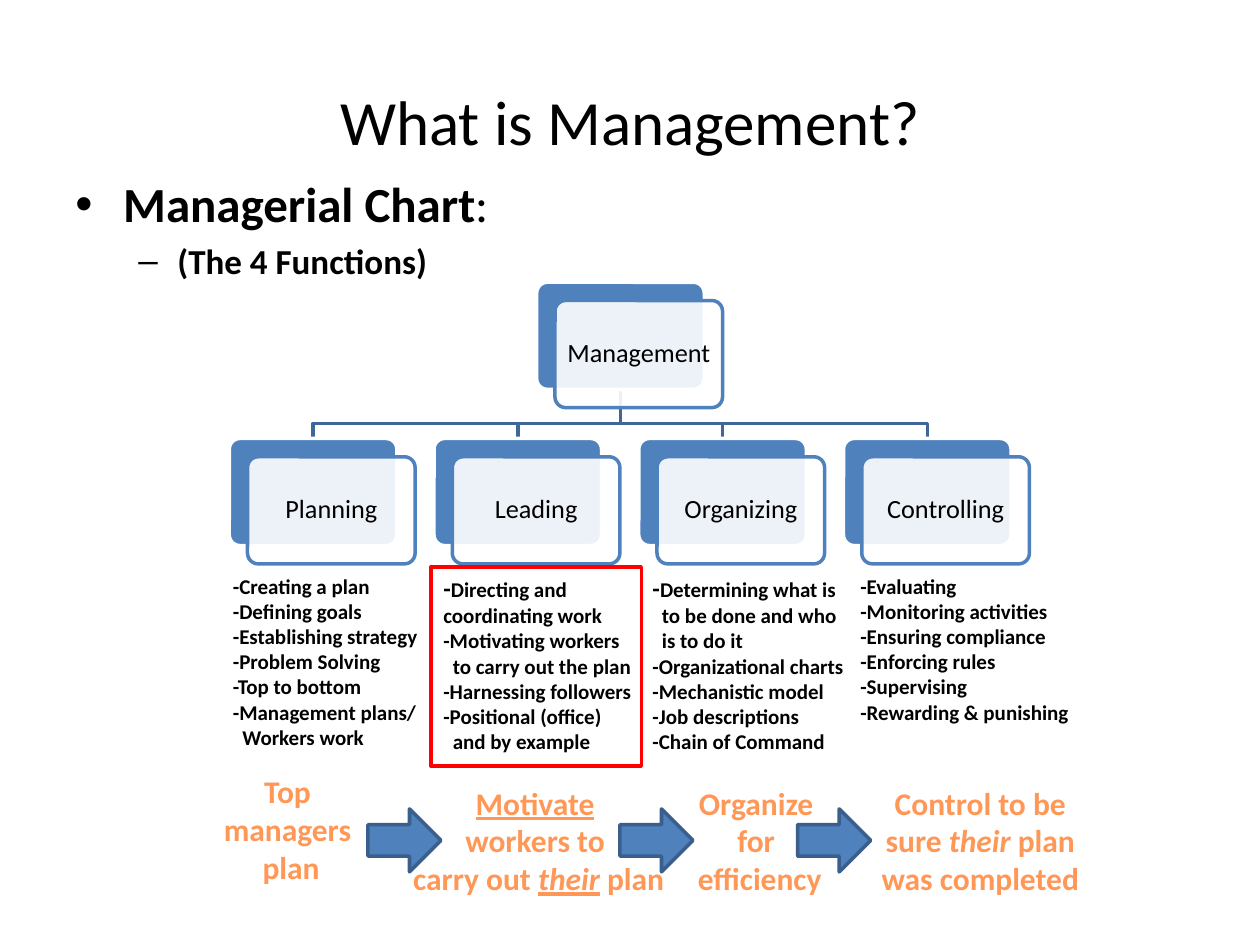
"""Build the slide on the four functions of management."""
import lxml.etree
import pptx
import pptx.dml.color
import pptx.enum.shapes
import pptx.enum.text
import pptx.oxml.ns
import pptx.util

Inches = pptx.util.Inches
Pt = pptx.util.Pt
SHAPE = pptx.enum.shapes.MSO_SHAPE
ALIGN = pptx.enum.text.PP_ALIGN
ANCHOR = pptx.enum.text.MSO_ANCHOR
FIT = pptx.enum.text.MSO_AUTO_SIZE

BLUE, DARK_BLUE, CONNECTOR_BLUE = "4F81BD", "3A5F8C", "3F6797"
WHITE, BLACK, RED, ORANGE = "FFFFFF", "000000", "FF0000", "FF9856"

TITLE = "What is Management?"
OUTLINE = [
    {"runs": [("Managerial Chart", {}), (":", {"bold": False})],
     "bullet": "•", "size": 28, "margin": 0.38, "hanging": 0.38},
    {"runs": [("(The 4 Functions)", {})],
     "bullet": "–", "size": 20, "margin": 0.81, "hanging": 0.31},
]
ROOT = "Management"
LARGE_DASH = ("-", {"size": 14})
FUNCTIONS = [
    ("Planning", (1.75, 4.5, 2, 1.51),
     ["-Creating a plan", "-Defining goals", "-Establishing strategy", "-Problem Solving",
      "-Top to bottom", "-Management plans/", "Workers work"]),
    ("Leading", (3.42, 4.5, 1.75, 1.75),
     [[LARGE_DASH, ("Directing and coordinating work", {})], "-Motivating workers",
      "to carry out the plan", "-Harnessing followers", "-Positional (office)",
      "and by example"]),
    ("Organizing", (5.08, 4.5, 1.75, 1.78),
     [[LARGE_DASH, ("Determining what is", {})], "to be done and who", "is to do it",
      "-Organizational charts", "-Mechanistic model", "-Job descriptions",
      "-Chain of Command"]),
    ("Controlling", (6.73, 4.5, 2, 1.51),
     ["-Evaluating", "-Monitoring activities", "-Ensuring compliance", "-Enforcing rules",
      "-Supervising", "-Rewarding & punishing"]),
]
SUMMARIES = [
    ((1.67, 6.08, 1.28, 1.01), ["Top ", "managers ", "plan"]),
    ((3.15, 6.17, 2.25, 1.01),
     [[("Motivate", {"underline": True}), (" ", {})], "workers to ",
      [("carry out ", {}), ("their", {"italic": True, "underline": True}), (" plan", {})]]),
    ((5.43, 6.17, 1.2, 1.01), ["Organize ", "for ", "efficiency"]),
    ((6.89, 6.17, 1.78, 1.01),
     ["Control to be", [("sure ", {}), ("their", {"italic": True}), (" plan", {})],
      "was completed"]),
]
HIGHLIGHT = (3.42, 4.5, 1.67, 1.58)
ARROW_LEFTS = [2.92, 4.92, 6.33]

NODE_WIDTH, NODE_HEIGHT, NODE_OFFSET = 1.33, 0.85, 0.145
ROOT_LEFT, ROOT_TOP = 4.26, 2.24
FIRST_LEFT, NODE_PITCH, NODE_TOP = 1.82, 1.625, 3.48
BUS_TOP, BUS_LEVEL = 3.08, 3.36
CONTINUATION_INDENT = 0.075


def color(value):
    return pptx.dml.color.RGBColor.from_string(value)


def place(at):
    return [Inches(length) for length in at]


def write_text(slide, paragraphs, at, size=12, ink=BLACK, bold=False, align=ALIGN.LEFT,
               anchor=ANCHOR.TOP, wrap=True, fit=FIT.NONE, inset=None, spacing=None,
               continuation=0):
    frame = slide.shapes.add_textbox(*place(at)).text_frame
    frame.word_wrap, frame.vertical_anchor, frame.auto_size = wrap, anchor, fit
    if inset is not None:
        frame.margin_left = frame.margin_right = Inches(inset)
        frame.margin_top = frame.margin_bottom = Inches(inset)
    for index, content in enumerate(paragraphs):
        paragraph = frame.paragraphs[0] if index == 0 else frame.add_paragraph()
        paragraph.alignment = align
        if spacing:
            paragraph.line_spacing = spacing
        runs = [(content, {})] if isinstance(content, str) else content
        if continuation and not runs[0][0].startswith("-"):
            paragraph._p.get_or_add_pPr().set("marL", str(Inches(continuation)))
        for text, changes in runs:
            run = paragraph.add_run()
            run.text = text
            style = {"name": "Calibri", "size": size, "bold": bold, **changes}
            style["size"] = Pt(style["size"])
            for attribute, value in style.items():
                setattr(run.font, attribute, value)
            run.font.color.rgb = color(ink)
    return frame


def add_outline(slide):
    paragraphs = [[(text, {"size": item["size"], **changes}) for text, changes in item["runs"]]
                  for item in OUTLINE]
    frame = write_text(slide, paragraphs, (0.5, 1.33, 9, 5.37), bold=True)
    for paragraph, item in zip(frame.paragraphs, OUTLINE):
        paragraph.space_before = Pt(item["size"] * 0.2)
        properties = paragraph._p.get_or_add_pPr()
        properties.set("marL", str(Inches(item["margin"])))
        properties.set("indent", str(-Inches(item["hanging"])))
        bullet_font = lxml.etree.SubElement(properties, pptx.oxml.ns.qn("a:buFont"))
        bullet_font.set("typeface", "Arial")
        bullet = lxml.etree.SubElement(properties, pptx.oxml.ns.qn("a:buChar"))
        bullet.set("char", item["bullet"])


def paint(shape, fill, line, opacity=100):
    shape.shadow.inherit = False
    if fill:
        shape.fill.solid()
        shape.fill.fore_color.rgb = color(fill)
        if opacity < 100:
            solid = shape._element.spPr.find(pptx.oxml.ns.qn("a:solidFill"))
            alpha = lxml.etree.SubElement(solid[0], pptx.oxml.ns.qn("a:alpha"))
            alpha.set("val", str(opacity * 1000))
    else:
        shape.fill.background()
    shape.line.color.rgb = color(line)
    shape.line.width = Pt(2)


def add_shape(slide, kind, at, fill, line, opacity=100):
    shape = slide.shapes.add_shape(kind, *place(at))
    paint(shape, fill, line, opacity)
    return shape


def add_branch(slide, child_left):
    start, end = ROOT_LEFT + NODE_WIDTH / 2, child_left + NODE_WIDTH / 2
    corners = [(start, BUS_LEVEL), (end, BUS_LEVEL), (end, NODE_TOP)]
    builder = slide.shapes.build_freeform(Inches(start), Inches(BUS_TOP))
    builder.add_line_segments([place(corner) for corner in corners], close=False)
    paint(builder.convert_to_shape(), None, CONNECTOR_BLUE)


def add_node(slide, label, left, top):
    for offset, fill, line, opacity in ((0, BLUE, WHITE, 100), (NODE_OFFSET, WHITE, BLUE, 90)):
        at = (left + offset, top + offset, NODE_WIDTH, NODE_HEIGHT)
        card = add_shape(slide, SHAPE.ROUNDED_RECTANGLE, at, fill, line, opacity)
        card.adjustments[0] = 0.1
    inner = NODE_OFFSET + 0.025
    write_text(slide, [label], (left + inner, top + inner, NODE_WIDTH - 0.05, NODE_HEIGHT - 0.05),
               size=15, align=ALIGN.CENTER, anchor=ANCHOR.MIDDLE, inset=0.06, spacing=0.9)


def main():
    presentation = pptx.Presentation()
    presentation.slide_width, presentation.slide_height = Inches(10), Inches(7.5)
    slide = presentation.slides.add_slide(presentation.slide_layouts[6])

    write_text(slide, [TITLE], (0.5, 0.33, 9, 1.25), size=36, align=ALIGN.CENTER,
               anchor=ANCHOR.MIDDLE)
    add_outline(slide)

    lefts = [FIRST_LEFT + index * NODE_PITCH for index in range(len(FUNCTIONS))]
    for left in reversed(lefts):
        add_branch(slide, left)
    add_node(slide, ROOT, ROOT_LEFT, ROOT_TOP)
    for left, (label, at, duties) in zip(lefts, FUNCTIONS):
        add_node(slide, label, left, NODE_TOP)
        write_text(slide, duties, at, bold=True, fit=FIT.SHAPE_TO_FIT_TEXT,
                   continuation=CONTINUATION_INDENT)
    add_shape(slide, SHAPE.RECTANGLE, HIGHLIGHT, None, RED)

    for at, lines in SUMMARIES:
        write_text(slide, lines, at, size=18, ink=ORANGE, bold=True, align=ALIGN.CENTER,
                   wrap=False, fit=FIT.SHAPE_TO_FIT_TEXT)
    for left in ARROW_LEFTS:
        add_shape(slide, SHAPE.RIGHT_ARROW, (left, 6.42, 0.58, 0.5), BLUE, DARK_BLUE)

    presentation.save("out.pptx")


if __name__ == "__main__":
    main()
